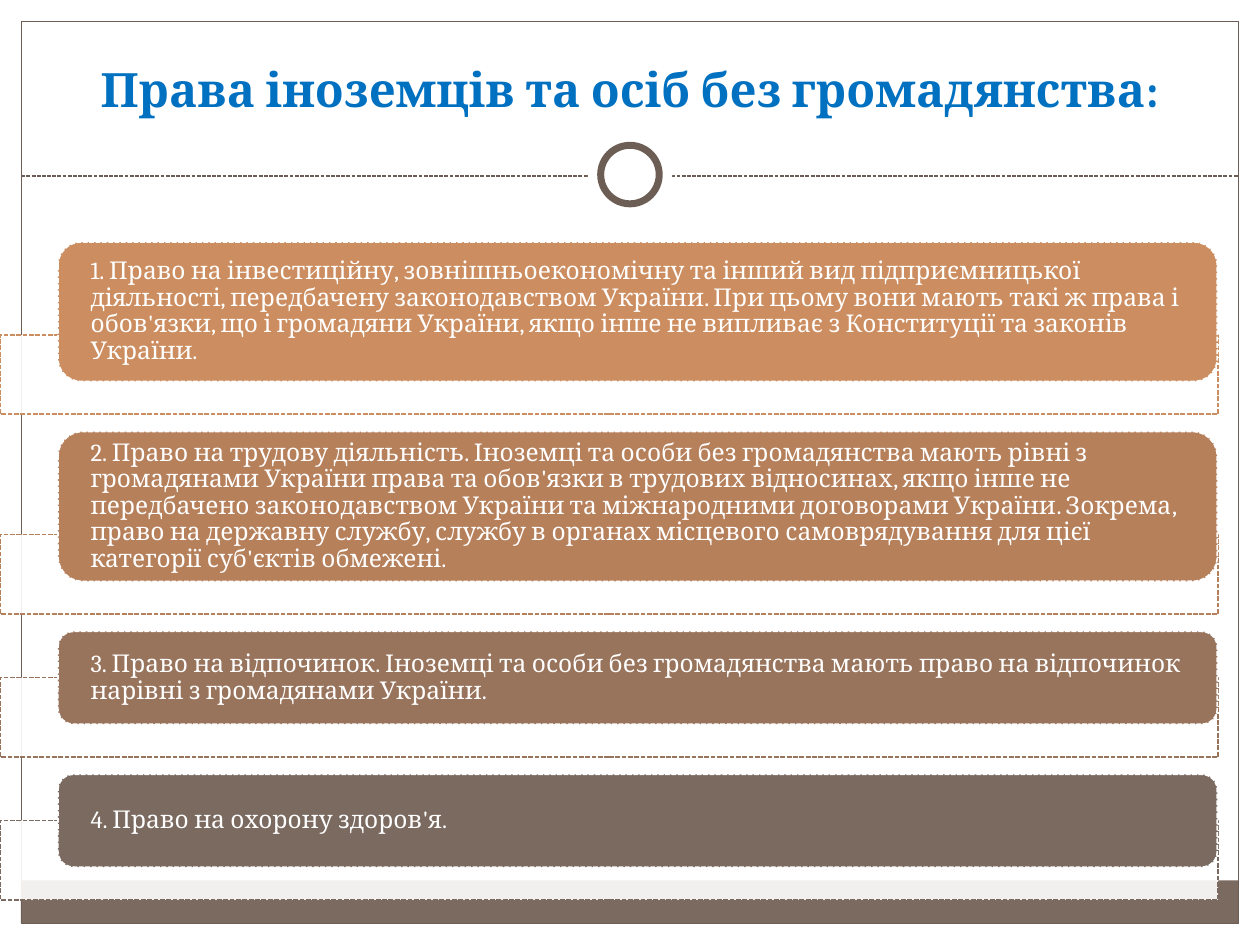
from pptx import Presentation
from pptx.dml.color import RGBColor
from pptx.enum.dml import MSO_LINE
from pptx.enum.shapes import MSO_CONNECTOR, MSO_SHAPE
from pptx.enum.text import MSO_ANCHOR, PP_ALIGN
from pptx.oxml.ns import qn
from pptx.util import Cm, Pt
from lxml.etree import SubElement

COLORS = {
    "white": "FFFFFF", "title": "0070C0", "frame": "6C5E55", "footer": "7A6A60",
    "right1": "CC8E60", "right2": "B6805B", "right3": "99745C", "right4": "7A6A60",
}

# Colour, card height in cm, text
RIGHTS = [
    ("right1", 2.81, "1. Право на інвестиційну, зовнішньоекономічну та інший вид підприємницької "
     "діяльності, передбачену законодавством України. При цьому вони мають такі ж права і "
     "обов'язки, що і громадяни України, якщо інше не випливає з Конституції та законів України."),
    ("right2", 3.02, "2. Право на трудову діяльність. Іноземці та особи без громадянства мають "
     "рівні з громадянами України права та обов'язки в трудових відносинах, якщо інше не "
     "передбачено законодавством України та міжнародними договорами України. Зокрема, право на "
     "державну службу, службу в органах місцевого самоврядування для цієї категорії суб'єктів "
     "обмежені."),
    ("right3", 1.87, "3. Право на відпочинок. Іноземці та особи без громадянства мають право на "
     "відпочинок нарівні з громадянами України."),
    ("right4", 1.87, "4. Право на охорону здоров'я."),
]
FIRST_TOP, CARD_GAP = 4.88, 1.01
BAND_OVERLAP, BAND_HEIGHT = 0.94, 1.6
TEXT_INSET = 0.66
CORNER_INSET = 0.05  # share of the height that rounded corners add to the inset


class SlideBuilder:
    font_name = "Cambria"

    def __init__(self, slide):
        self.slide = slide

    def color(self, name):
        return RGBColor.from_string(COLORS[name])

    def style_line(self, line, color, width, dashed=False):
        line.color.rgb = self.color(color)
        line.width = Pt(width)
        if dashed:
            line.dash_style = MSO_LINE.SQUARE_DOT

    def shape(self, kind, box, fill=None, line=None, width=0.75, dashed=False, opacity=100):
        shape = self.slide.shapes.add_shape(kind, *map(Cm, box))
        shape.shadow.inherit = False
        if fill:
            shape.fill.solid()
            shape.fill.fore_color.rgb = self.color(fill)
            if opacity < 100:
                solid_fill = shape._element.spPr.find(qn("a:solidFill"))
                SubElement(solid_fill[0], qn("a:alpha"), val=str(opacity * 1000))
        else:
            shape.fill.background()
        if line:
            self.style_line(shape.line, line, width, dashed)
        else:
            shape.line.fill.background()
        return shape

    def dashed_rule(self, left, right, top):
        rule = self.slide.shapes.add_connector(
            MSO_CONNECTOR.STRAIGHT, Cm(left), Cm(top), Cm(right), Cm(top))
        self.style_line(rule.line, "frame", 0.75, dashed=True)
        SubElement(rule._element.spPr, qn("a:effectLst"))

    def set_text(self, shape, text, size, color, align, anchor, bold=False):
        text_frame = shape.text_frame
        text_frame.word_wrap = True
        text_frame.vertical_anchor = anchor
        text_frame.text = text
        paragraph = text_frame.paragraphs[0]
        paragraph.alignment = align
        font = paragraph.runs[0].font
        font.name, font.size, font.bold = self.font_name, Pt(size), bold
        font.color.rgb = self.color(color)
        return text_frame

    def title(self, text, box):
        text_box = self.slide.shapes.add_textbox(*map(Cm, box))
        text_frame = self.set_text(text_box, text, 27, "title", PP_ALIGN.CENTER,
                                   MSO_ANCHOR.BOTTOM, bold=True)
        text_frame.margin_bottom = Cm(1.25)

    def right_card(self, text, color, top, height):
        band_top = top + height - BAND_OVERLAP
        self.shape(MSO_SHAPE.RECTANGLE, (0, band_top, 24.56, BAND_HEIGHT), "white",
                   color, 0.9, dashed=True, opacity=90)
        card = self.shape(MSO_SHAPE.ROUNDED_RECTANGLE, (1.17, top, 23.37, height), color,
                          "white", 0.9, dashed=True)
        text_frame = self.set_text(card, text, 14, "white", PP_ALIGN.LEFT, MSO_ANCHOR.MIDDLE)
        text_frame.margin_left = text_frame.margin_right = Cm(TEXT_INSET - CORNER_INSET * height)
        text_frame.margin_top = text_frame.margin_bottom = 0
        text_frame.paragraphs[0].line_spacing = 0.9


def main():
    presentation = Presentation()
    presentation.slide_width, presentation.slide_height = Cm(25.4), Cm(19.05)
    builder = SlideBuilder(presentation.slides.add_slide(presentation.slide_layouts[6]))

    # Page frame, footer bar and divider with ring
    builder.shape(MSO_SHAPE.RECTANGLE, (0.42, 17.75, 24.54, 0.86), "footer")
    builder.shape(MSO_SHAPE.RECTANGLE, (0.43, 0.43, 24.54, 18.19), line="frame")
    builder.dashed_rule(0.43, 24.97, 3.55)
    builder.shape(MSO_SHAPE.OVAL, (11.85, 2.67, 1.7, 1.7), "white")
    builder.shape(MSO_SHAPE.OVAL, (12.11, 2.93, 1.18, 1.18), "white", "frame", 4)

    # Title
    builder.title("Права іноземців та осіб без громадянства:", (0.84, 0.64, 23.7, 2.97))

    # Cards of rights
    top = FIRST_TOP
    for color, height, text in RIGHTS:
        builder.right_card(text, color, top, height)
        top += height + CARD_GAP

    presentation.save("out.pptx")


if __name__ == "__main__":
    main()
